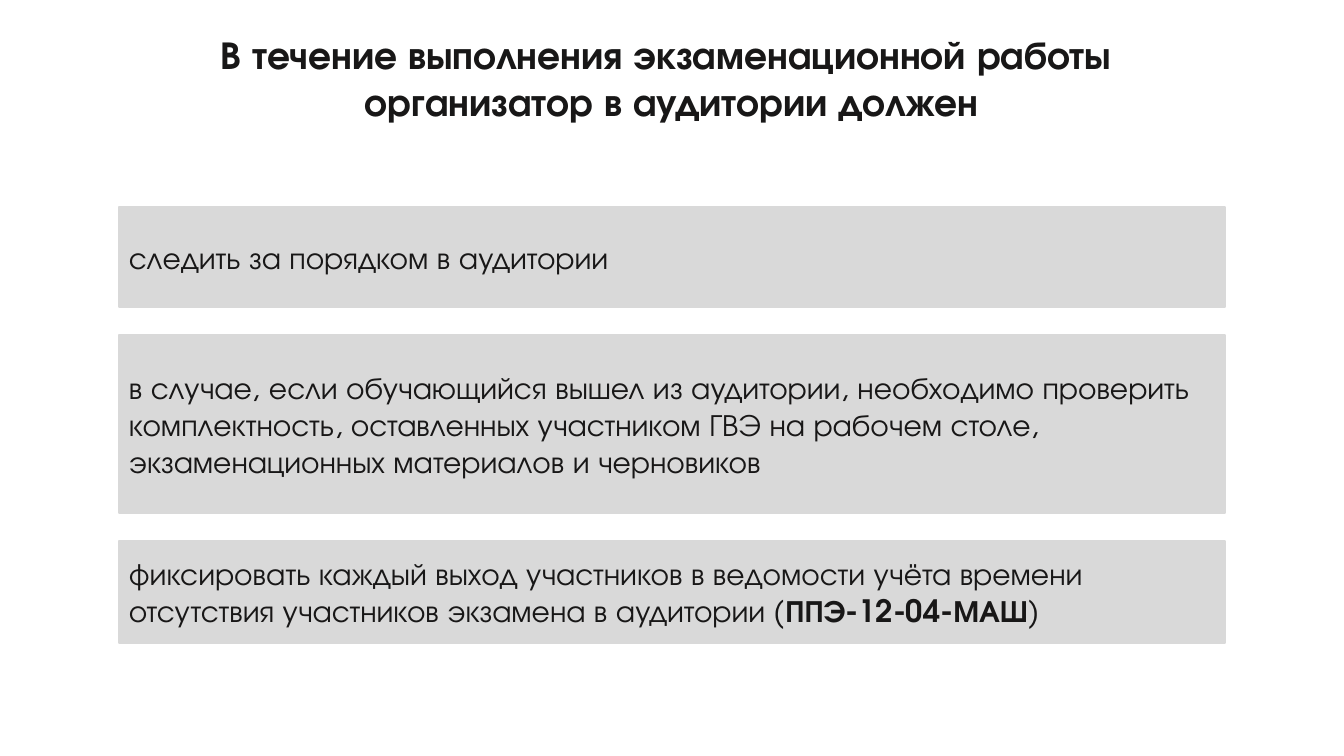
from dataclasses import dataclass

from pptx import Presentation
from pptx.dml.color import RGBColor
from pptx.enum.shapes import MSO_SHAPE as Shape
from pptx.enum.text import MSO_ANCHOR as Anchor, MSO_AUTO_SIZE as AutoSize, PP_ALIGN as Align
from pptx.slide import Slide
from pptx.text.text import TextFrame
from pptx.util import Pt

EMU_PER_PX = 914400 / 100.8


@dataclass(frozen=True)
class Theme:
    font: str = "TeX Gyre Adventor"
    ink: RGBColor = RGBColor(0x18, 0x17, 0x17)
    panel: RGBColor = RGBColor(0xD9, 0xD9, 0xD9)
    title_size: int = 28
    body_size: int = 22


@dataclass(frozen=True)
class Run:
    text: str
    bold: bool = False


@dataclass(frozen=True)
class Duty:
    height: int
    runs: tuple[Run, ...]


THEME = Theme()
PANEL_LEFT, PANEL_TOP, PANEL_WIDTH, PANEL_GAP = 119, 207, 1106, 28

# The space that ends the first line is part of its centred width
TITLE = (
    (Run("В течение выполнения экзаменационной работы ", bold=True),),
    (Run("организатор в аудитории должен", bold=True),),
)
DUTIES = (
    Duty(100, (Run("следить за порядком в аудитории"),)),
    Duty(178, (Run("в случае, если обучающийся вышел из аудитории, необходимо проверить "
                   "комплектность, оставленных участником ГВЭ на рабочем столе, "
                   "экзаменационных материалов и черновиков"),)),
    Duty(102, (Run("фиксировать каждый выход участников в ведомости учёта времени "
                   "отсутствия участников экзамена в аудитории ("),
               Run("ППЭ-12-04-МАШ", bold=True),
               Run(")"))),
)


def px(length: int) -> int:
    return round(length * EMU_PER_PX)


def write_text(frame: TextFrame, paragraphs: tuple[tuple[Run, ...], ...], *,
               size: int, align: Align, anchor: Anchor) -> None:
    frame.word_wrap = True
    frame.vertical_anchor = anchor
    for index, runs in enumerate(paragraphs):
        paragraph = frame.add_paragraph() if index else frame.paragraphs[0]
        paragraph.alignment = align
        for item in runs:
            run = paragraph.add_run()
            run.text = item.text
            run.font.name = THEME.font
            run.font.size = Pt(size)
            run.font.bold = item.bold
            run.font.color.rgb = THEME.ink


def add_title(slide: Slide) -> None:
    box = slide.shapes.add_textbox(px(163), px(25), px(1018), px(105))
    write_text(box.text_frame, TITLE, size=THEME.title_size,
               align=Align.CENTER, anchor=Anchor.TOP)
    box.text_frame.auto_size = AutoSize.SHAPE_TO_FIT_TEXT


def add_duty(slide: Slide, duty: Duty, top: int) -> None:
    panel = slide.shapes.add_shape(Shape.RECTANGLE, px(PANEL_LEFT), px(top),
                                   px(PANEL_WIDTH), px(duty.height))
    panel.shadow.inherit = False
    panel.fill.solid()
    panel.fill.fore_color.rgb = THEME.panel
    panel.line.color.rgb = THEME.panel
    panel.line.width = Pt(1)
    write_text(panel.text_frame, (duty.runs,), size=THEME.body_size,
               align=Align.LEFT, anchor=Anchor.MIDDLE)


def main() -> None:
    presentation = Presentation()
    presentation.slide_width, presentation.slide_height = px(1344), px(756)
    slide = presentation.slides.add_slide(presentation.slide_layouts[6])

    # Heading
    add_title(slide)

    # Duties, stacked with equal gaps
    top = PANEL_TOP
    for duty in DUTIES:
        add_duty(slide, duty, top)
        top += duty.height + PANEL_GAP

    presentation.save("out.pptx")


if __name__ == "__main__":
    main()
